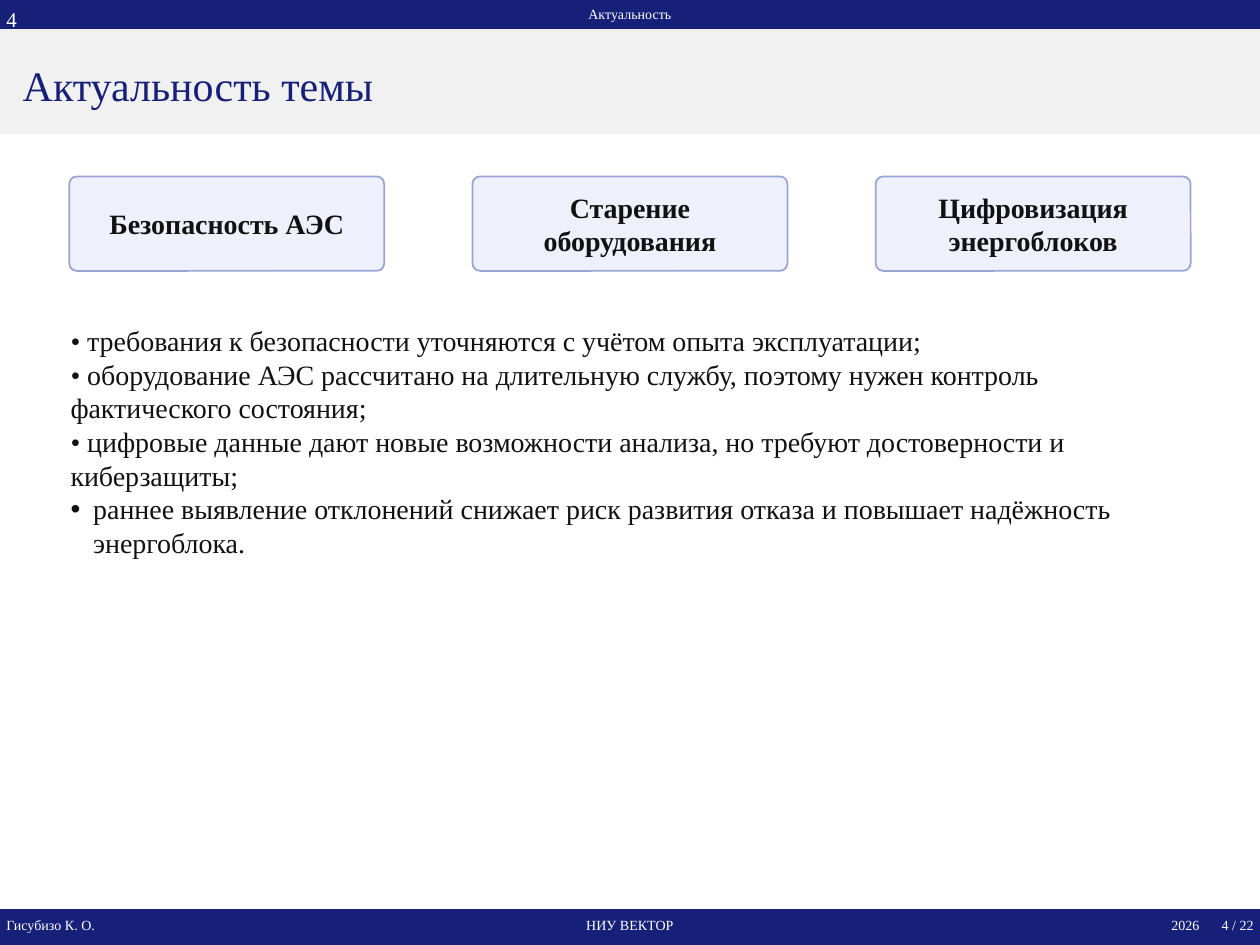
import dataclasses
import typing

import pptx
import pptx.dml.color
import pptx.enum.shapes
import pptx.enum.text
import pptx.oxml
import pptx.oxml.ns
import pptx.util

Inches = pptx.util.Inches
Align = pptx.enum.text.PP_ALIGN
Anchor = pptx.enum.text.MSO_ANCHOR
ShapeType = pptx.enum.shapes.MSO_SHAPE


@dataclasses.dataclass(frozen=True)
class Theme:
    font: str = "Times New Roman"
    navy: str = "172078"
    pale_grey: str = "F1F1F1"
    card_fill: str = "EEF1FB"
    card_line: str = "9AA3D4"
    ink: str = "111111"
    white: str = "FFFFFF"
    small_size: int = 8
    number_size: int = 12
    body_size: int = 16
    title_size: int = 24


class Box(typing.NamedTuple):
    left: float
    top: float
    width: float
    height: float

    def lengths(self) -> list:
        return [Inches(value) for value in self]


class Band(typing.NamedTuple):
    box: Box
    color: str


class Label(typing.NamedTuple):
    text: str
    box: Box
    align: Align


THEME = Theme()
BANDS = [
    Band(Box(0, 0, 10, 0.24), THEME.navy),
    Band(Box(0, 0.24, 10, 0.82), THEME.pale_grey),
    Band(Box(0, 7.22, 10, 0.28), THEME.navy),
]
LABELS = [
    Label("Актуальность", Box(0.2, 0.04, 9.6, 0.14), Align.CENTER),
    Label("Гисубизо К. О.", Box(0.05, 7.27, 2.4, 0.14), Align.LEFT),
    Label("НИУ ВЕКТОР", Box(3.85, 7.27, 2.3, 0.14), Align.CENTER),
    Label("2026", Box(9.02, 7.27, 0.5, 0.14), Align.RIGHT),
    Label("4 / 22", Box(9.55, 7.27, 0.4, 0.14), Align.RIGHT),
]
CARDS = ["Безопасность АЭС", "Старение оборудования", "Цифровизация энергоблоков"]
CARD_BOX = Box(0.55, 1.4, 2.5, 0.75)
CARD_STEP = 3.2
POINTS = [
    "• требования к безопасности уточняются с учётом опыта эксплуатации;",
    "• оборудование АЭС рассчитано на длительную службу, поэтому нужен контроль "
    "фактического состояния;",
    "• цифровые данные дают новые возможности анализа, но требуют достоверности "
    "и киберзащиты;",
    "раннее выявление отклонений снижает риск развития отказа и повышает "
    "надёжность энергоблока.",
]


def rgb(color: str) -> pptx.dml.color.RGBColor:
    return pptx.dml.color.RGBColor.from_string(color)


def write_text(shape, text: str, *, size: int, color: str, bold: bool = False,
               align: Align = Align.LEFT, anchor: Anchor = Anchor.MIDDLE,
               inset: float = 0, wrap: bool = True) -> None:
    frame = shape.text_frame
    frame.text = text
    frame.word_wrap = wrap
    frame.auto_size = pptx.enum.text.MSO_AUTO_SIZE.NONE
    frame.vertical_anchor = anchor
    frame.margin_left = frame.margin_right = Inches(inset)
    frame.margin_top = frame.margin_bottom = Inches(inset)
    for paragraph in frame.paragraphs:
        paragraph.alignment = align
        paragraph.space_before = pptx.util.Pt(0)
        font = paragraph.runs[0].font
        font.name = THEME.font
        font.size = pptx.util.Pt(size)
        font.bold = bold
        font.color.rgb = rgb(color)


def set_bullet(paragraph, symbol: str = "", hanging: float = 0) -> None:
    properties = paragraph._p.get_or_add_pPr()
    properties.set("marL", str(Inches(hanging)))
    properties.set("indent", str(-Inches(hanging)))
    bullet = pptx.oxml.parse_xml(
        f'<a:{"buChar" if symbol else "buNone"} {pptx.oxml.ns.nsdecls("a")}/>')
    if symbol:
        bullet.set("char", symbol)
    properties.append(bullet)


def add_panel(slide, kind: ShapeType, box: Box, fill: str, line: str):
    shape = slide.shapes.add_shape(kind, *box.lengths())
    shape.shadow.inherit = False
    shape.fill.solid()
    shape.fill.fore_color.rgb = rgb(fill)
    shape.line.color.rgb = rgb(line)
    shape.line.width = pptx.util.Pt(1)
    return shape


def add_label(slide, label: Label, **text_format) -> None:
    text_box = slide.shapes.add_textbox(*label.box.lengths())
    write_text(text_box, label.text, color=THEME.white, align=label.align, **text_format)


def add_card(slide, text: str, box: Box) -> None:
    card = add_panel(slide, ShapeType.ROUNDED_RECTANGLE, box,
                     THEME.card_fill, THEME.card_line)
    card.adjustments[0] = 0.08
    write_text(card, text, size=THEME.body_size, color=THEME.ink, bold=True,
               align=Align.CENTER, inset=0.08)


def place_in_front(shape, box: Box) -> None:
    shape.left, shape.top, shape.width, shape.height = box.lengths()
    shape.element.getparent().append(shape.element)


def main() -> None:
    presentation = pptx.Presentation()
    presentation.slide_width, presentation.slide_height = Inches(10), Inches(7.5)
    slide = presentation.slides.add_slide(presentation.slide_layouts[1])

    for band in BANDS:
        add_panel(slide, ShapeType.RECTANGLE, band.box, band.color, band.color)
    for label in LABELS:
        add_label(slide, label, size=THEME.small_size)

    title = slide.shapes.title
    place_in_front(title, Box(0.18, 0.36, 9.6, 0.62))
    write_text(title, "Актуальность темы", size=THEME.title_size, color=THEME.navy)

    for index, text in enumerate(CARDS):
        add_card(slide, text, CARD_BOX._replace(left=CARD_BOX.left + index * CARD_STEP))

    body = slide.placeholders[1]
    place_in_front(body, Box(0.56, 2.57, 8.5, 3.5))
    write_text(body, "\n".join(POINTS), size=THEME.body_size, color=THEME.ink,
               anchor=Anchor.TOP)
    *plain_points, last_point = body.text_frame.paragraphs
    for paragraph in plain_points:
        set_bullet(paragraph)
    set_bullet(last_point, "•", 0.18)

    add_label(slide, Label("4", Box(0, 0, 0.2, 0.3), Align.LEFT),
              size=THEME.number_size, anchor=Anchor.TOP, inset=0.05, wrap=False)
    presentation.save("out.pptx")


if __name__ == "__main__":
    main()
